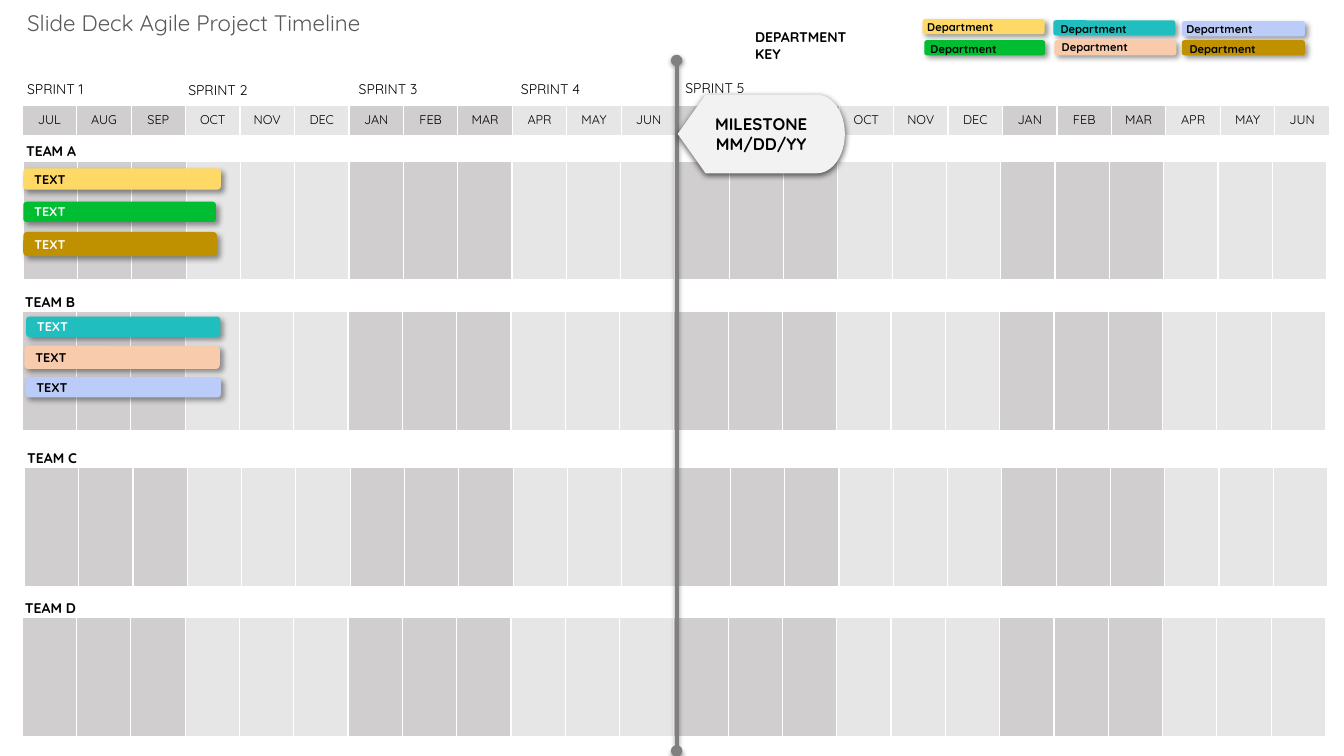
from dataclasses import dataclass

from lxml.etree import SubElement
from pptx import Presentation
from pptx.dml.color import RGBColor
from pptx.enum.shapes import MSO_CONNECTOR, MSO_SHAPE
from pptx.enum.text import MSO_ANCHOR, PP_ALIGN
from pptx.oxml import parse_xml
from pptx.oxml.ns import nsdecls, qn
from pptx.util import Inches, Length, Pt


@dataclass(frozen=True)
class Theme:
    font: str = "Quicksand"
    black: str = "000000"
    white: str = "FFFFFF"
    title: str = "595959"
    line: str = "808080"
    milestone: str = "F2F2F2"
    dark: str = "D0CECE"
    light: str = "E7E6E6"
    yellow: str = "FFD966"
    green: str = "00BD32"
    brown: str = "BF9000"
    teal: str = "20BEBE"
    peach: str = "F8CBAD"
    lavender: str = "BCCCF8"
    title_size: float = 16
    milestone_size: float = 12
    label_size: float = 10
    bar_size: float = 9
    key_size: float = 8


@dataclass(frozen=True)
class Box:
    """Left and width in month columns, top and height in rows."""
    col: float
    row: float
    cols: float
    rows: float


@dataclass(frozen=True)
class Shadow:
    alpha: int
    blur: float
    dist: float
    angle: int


@dataclass(frozen=True)
class Bar:
    box: Box
    color: str
    text_color: str


@dataclass(frozen=True)
class Department:
    color: str
    chip: Box
    label: Box


T = Theme()
BAR_SHADOW = Shadow(40, 4, 3, 45)
LINE_SHADOW = Shadow(38, 3.1, 1.6, 90)
MILESTONE_SHADOW = Shadow(63, 4.5, 1.5, 90)

# Grid: one column per month, one row per header height
MARGIN, COL, ROW = 0.22, 0.54, 0.3
MONTHS = "JUL AUG SEP OCT NOV DEC JAN FEB MAR APR MAY JUN".split() * 2
QUARTER = 3

HEADER = Box(0, 3.47, 24.02, 1)
TEAMS = {name: Box(col, row, 23.94, 3.93) for name, col, row in (
    ("TEAM A", 0.02, 5.33), ("TEAM B", 0, 10.3),
    ("TEAM C", 0.04, 15.47), ("TEAM D", 0, 20.43))}
SPRINTS = ((-0.09, 2.5), (2.87, 2.53), (6, 2.5), (8.98, 2.5), (12, 2.47))
BARS = (
    Bar(Box(0.02, 5.57, 3.63, 0.7), T.yellow, T.black),
    Bar(Box(0.02, 6.67, 3.54, 0.67), T.green, T.white),
    Bar(Box(0.02, 7.67, 3.56, 0.8), T.brown, T.white),
    Bar(Box(0.07, 10.47, 3.57, 0.67), T.teal, T.white),
    Bar(Box(0.04, 11.43, 3.59, 0.77), T.peach, T.black),
    Bar(Box(0.06, 12.47, 3.59, 0.67), T.lavender, T.black),
)
DEPARTMENTS = (
    Department(T.yellow, Box(16.54, 0.63, 2.24, 0.5), Box(16.44, 0.5, 1.81, 0.8)),
    Department(T.green, Box(16.57, 1.33, 2.22, 0.5), Box(16.5, 1.23, 2.24, 0.8)),
    Department(T.teal, Box(18.94, 0.67, 2.24, 0.5), Box(18.89, 0.57, 1.98, 0.8)),
    Department(T.peach, Box(18.96, 1.33, 2.24, 0.5), Box(18.91, 1.17, 1.61, 0.8)),
    Department(T.lavender, Box(21.3, 0.7, 2.26, 0.5), Box(21.2, 0.57, 1.59, 0.8)),
    Department(T.brown, Box(21.3, 1.33, 2.26, 0.5), Box(21.26, 1.23, 2.67, 0.8)),
)


def at_col(col: float) -> Length:
    return Inches(MARGIN + col * COL)


def at_row(row: float) -> Length:
    return Inches(row * ROW)


def place(box: Box) -> tuple:
    return at_col(box.col), at_row(box.row), Inches(box.cols * COL), at_row(box.rows)


def write(tf, text: str, size: float, color: str = T.black, bold: bool = False,
          align=PP_ALIGN.LEFT) -> None:
    tf.text = text
    for p in tf.paragraphs:
        p.alignment = align
        for r in p.runs:
            r.font.name, r.font.size, r.font.bold = T.font, Pt(size), bold
            r.font.color.rgb = RGBColor.from_string(color)


def add_label(s, box: Box, text: str, size: float, color: str = T.black,
              bold: bool = False) -> None:
    tf = s.shapes.add_textbox(*place(box)).text_frame
    tf.word_wrap = True
    write(tf, text, size, color, bold)


def add_shadow(sp, shadow: Shadow) -> None:
    effects = SubElement(sp.element.spPr, qn("a:effectLst"))
    effects.append(parse_xml(
        f'<a:outerShdw {nsdecls("a")} blurRad="{Pt(shadow.blur)}" dist="{Pt(shadow.dist)}" '
        f'dir="{shadow.angle * 60000}" algn="t" rotWithShape="0"><a:srgbClr val="{T.black}">'
        f'<a:alpha val="{shadow.alpha * 1000}"/></a:srgbClr></a:outerShdw>'))


def add_block(s, kind, box: Box, color: str, shadow: Shadow):
    sp = s.shapes.add_shape(kind, *place(box))
    sp.fill.solid()
    sp.fill.fore_color.rgb = RGBColor.from_string(color)
    sp.line.fill.background()
    add_shadow(sp, shadow)
    sp.text_frame.vertical_anchor = MSO_ANCHOR.MIDDLE
    return sp


def add_months(s, box: Box, names: list[str]) -> None:
    frame = s.shapes.add_table(1, len(MONTHS), *place(box))
    table = frame.table
    table.first_row = table.horz_banding = False
    for i, column in enumerate(table.columns):
        column.width = Inches(box.cols * COL / len(MONTHS))
        cell = table.cell(0, i)
        cell.fill.solid()
        shade = T.light if i // QUARTER % 2 else T.dark
        cell.fill.fore_color.rgb = RGBColor.from_string(shade)
        if names:
            cell.margin_left = cell.margin_right = cell.margin_top = cell.margin_bottom = 0
            cell.vertical_anchor = MSO_ANCHOR.MIDDLE
            write(cell.text_frame, names[i], T.bar_size, align=PP_ALIGN.CENTER)
    for props in frame.element.iter(qn("a:tcPr")):
        for i, side in enumerate(("lnL", "lnR", "lnT", "lnB")):
            props.insert(i, parse_xml(
                f'<a:{side} {nsdecls("a")} w="{Pt(1)}"><a:solidFill>'
                f'<a:srgbClr val="{T.white}"/></a:solidFill></a:{side}>'))


def add_milestone(s) -> None:
    x = at_col(12.02)
    line = s.shapes.add_connector(MSO_CONNECTOR.STRAIGHT, x, at_row(2), x, at_row(24.83))
    line.line.color.rgb = RGBColor.from_string(T.line)
    line.line.width = Pt(2.75)
    ln = line.element.spPr.find(qn("a:ln"))
    for end in ("a:headEnd", "a:tailEnd"):
        SubElement(ln, qn(end), type="oval")
    add_shadow(line, LINE_SHADOW)
    flag = add_block(s, MSO_SHAPE.FLOWCHART_DISPLAY, Box(12.04, 3.13, 3.07, 2.6),
                     T.milestone, MILESTONE_SHADOW)
    tf = flag.text_frame
    tf.margin_left = tf.margin_right = tf.margin_top = tf.margin_bottom = 0
    write(tf, "MILESTONE\nMM/DD/YY", T.milestone_size, bold=True, align=PP_ALIGN.CENTER)


def main() -> None:
    prs = Presentation()
    prs.slide_width, prs.slide_height = Inches(13.33), Inches(7.5)
    s = prs.slides.add_slide(prs.slide_layouts[6])

    # Calendar and team lanes
    for lane in TEAMS.values():
        add_months(s, lane, [])
    add_months(s, HEADER, MONTHS)
    for name, lane in TEAMS.items():
        add_label(s, Box(lane.col - 0.13, lane.row - 0.77, 4.15, 0.9), name,
                  T.label_size, bold=True)
    for number, (col, row) in enumerate(SPRINTS, 1):
        add_label(s, Box(col, row, 4.15, 0.9), f"SPRINT {number}", T.label_size)

    # Task bars
    for bar in BARS:
        sp = add_block(s, MSO_SHAPE.ROUNDED_RECTANGLE, bar.box, bar.color, BAR_SHADOW)
        write(sp.text_frame, "TEXT", T.bar_size, bar.text_color, bold=True)

    add_milestone(s)

    # Department key
    for dept in DEPARTMENTS:
        add_block(s, MSO_SHAPE.ROUNDED_RECTANGLE, dept.chip, dept.color, BAR_SHADOW)
        add_label(s, dept.label, "Department", T.key_size, bold=True)
    add_label(s, Box(13.28, 0.77, 2.56, 1.45), "DEPARTMENT KEY", T.label_size, bold=True)

    # Title
    add_label(s, Box(-0.09, 0.13, 10.56, 1.23), "Slide Deck Agile Project Timeline",
              T.title_size, T.title)
    prs.save("out.pptx")


if __name__ == "__main__":
    main()
